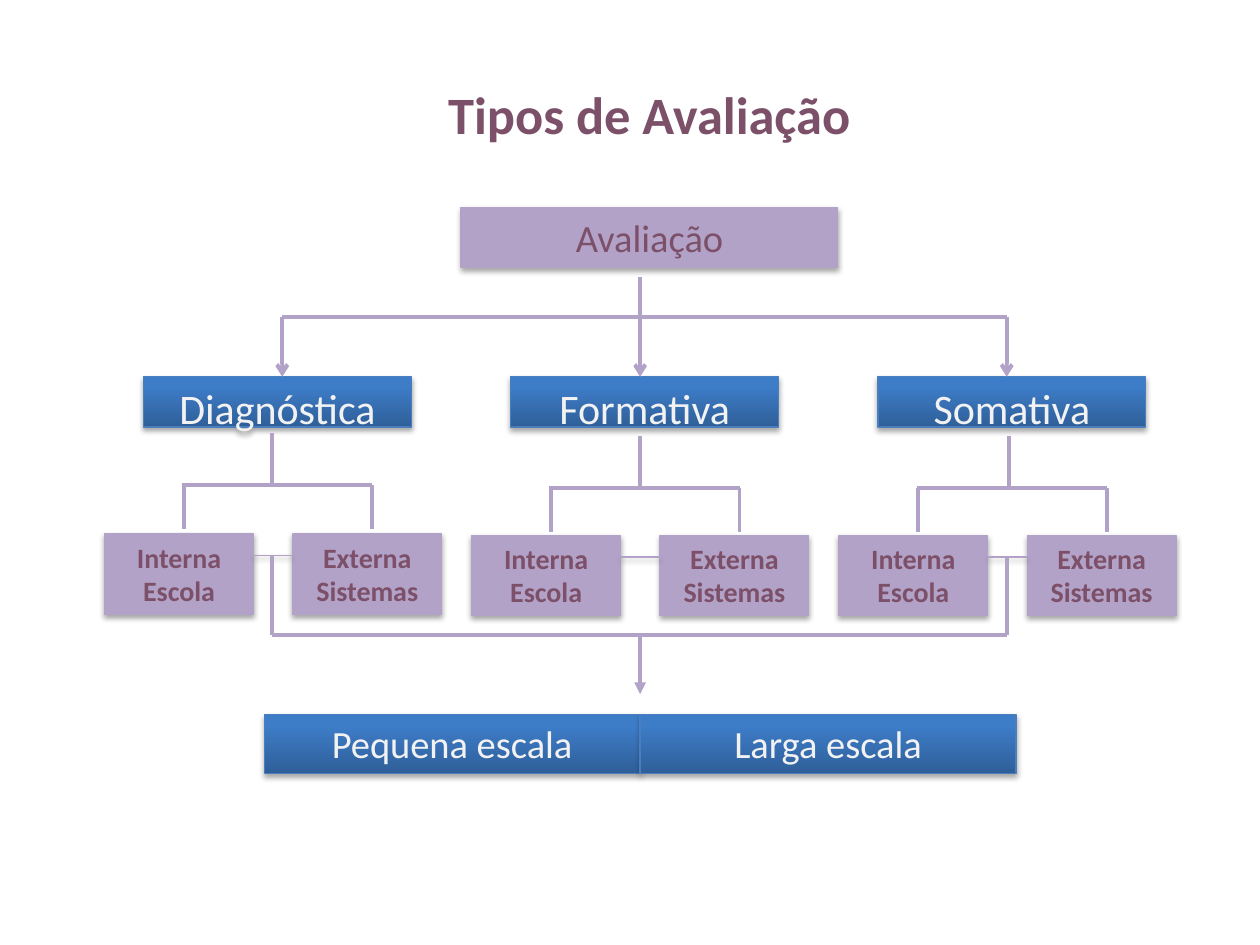
from lxml.etree import SubElement
from pptx import Presentation
from pptx.dml.color import RGBColor
from pptx.enum.shapes import MSO_CONNECTOR, MSO_SHAPE
from pptx.enum.text import MSO_ANCHOR, MSO_AUTO_SIZE, PP_ALIGN
from pptx.oxml.ns import qn
from pptx.util import Pt

TITLE = "Tipos de Avaliação"
ROOT = "Avaliação"
BRANCHES = ["Diagnóstica", "Formativa", "Somativa"]
LEAVES = [["Interna", "Escola"], ["Externa", "Sistemas"]]
SCALES = ["Pequena escala", "Larga escala"]

FONT = "Calibri"
COLORS = {
    "lilac": "B3A2C7",
    "plum": "7C5069",
    "light": "F2F2F2",
    "blue_line": "4B7EBC",
    "blue_dark": "2F5F99",
    "blue_bright": "3D7CC7",
}

# Lengths in points
PITCH = 209.8
BRANCH_LEFT, BRANCH_TOP = 82.1, 215.3
LEAF_LEFT, LEAF_GAP, LEAF_WIDTH = 59.8, 107.6, 85
STEM_X = [155.5, 365.8, 576.7]
ARROW_X = [161.3, 365.8, 575.3]
GROUP_SHIFT = [0, 1.5, 1.5]
CENTER_X = ARROW_X[1]
FORK_Y, COLLECTOR_Y = 181.4, 362.9
SCALE_WIDTH = 214.8


def color(name):
    return RGBColor.from_string(COLORS[name])


def add_shadow(shape):
    effects = shape._element.spPr.find(qn("a:effectLst"))
    if effects is None:
        effects = SubElement(shape._element.spPr, qn("a:effectLst"))
    shadow = SubElement(effects, qn("a:outerShdw"), blurRad=str(Pt(3.1)),
                        dist=str(Pt(1.8)), dir="5400000", rotWithShape="0")
    black = SubElement(shadow, qn("a:srgbClr"), val="000000")
    SubElement(black, qn("a:alpha"), val="35000")


def write(shape, lines, size, ink, bold=False):
    frame = shape.text_frame
    frame.text = "\n".join(lines)
    frame.word_wrap = True
    frame.auto_size = MSO_AUTO_SIZE.NONE
    frame.vertical_anchor = MSO_ANCHOR.TOP
    for paragraph in frame.paragraphs:
        paragraph.alignment = PP_ALIGN.CENTER
        font = paragraph.font
        font.name, font.size, font.bold = FONT, Pt(size), bold
        font.color.rgb = color(ink)


def add_box(slide, left, top, width, height, lines, size, blue=False, bold=False):
    box = slide.shapes.add_shape(MSO_SHAPE.RECTANGLE, Pt(left), Pt(top),
                                 Pt(width), Pt(height))
    if blue:
        box.fill.gradient()
        box.fill.gradient_angle = 90
        stops = zip(box.fill.gradient_stops, ["blue_dark", "blue_bright"], [0, 0.8])
        for stop, name, position in stops:
            stop.color.rgb = color(name)
            stop.position = position
    else:
        box.fill.solid()
        box.fill.fore_color.rgb = color("lilac")
    box.line.color.rgb = color("blue_line" if blue else "lilac")
    box.line.width = Pt(0.75)
    box.shadow.inherit = False
    add_shadow(box)
    write(box, lines, size, "light" if blue else "plum", bold)


def add_line(slide, x1, y1, x2, y2, width=2.25, arrow=None):
    line = slide.shapes.add_connector(MSO_CONNECTOR.STRAIGHT, Pt(x1), Pt(y1),
                                      Pt(x2), Pt(y2))
    line.line.color.rgb = color("lilac")
    line.line.width = Pt(width)
    if arrow:
        SubElement(line.line._get_or_add_ln(), qn("a:tailEnd"), type=arrow)
    SubElement(line._element.spPr, qn("a:effectLst"))
    return line


def add_leaves(slide, index):
    """Draw the pair of boxes under one branch and the bracket above it."""
    shift = GROUP_SHIFT[index]
    left = LEAF_LEFT + index * PITCH
    top = 305.1 + shift / 2
    for position, lines in enumerate(LEAVES):
        add_box(slide, left + position * LEAF_GAP, top, LEAF_WIDTH, 46.1,
                lines, 16, bold=True)
    link_y = top + 12.4
    link = add_line(slide, left + LEAF_WIDTH, link_y, left + LEAF_GAP, link_y, 0.75)
    add_shadow(link)

    bar_y = 277.4 + shift
    first = left + 45.4
    last = first + LEAF_GAP
    add_line(slide, first - 1, bar_y, last, bar_y)
    add_line(slide, STEM_X[index], 247.7 + shift, STEM_X[index], bar_y)
    for x in (first, last):
        add_line(slide, x, bar_y, x, bar_y + 25)


def main():
    presentation = Presentation()
    presentation.slide_width, presentation.slide_height = Pt(720), Pt(540)
    slide = presentation.slides.add_slide(presentation.slide_layouts[5])

    title = slide.shapes.title
    title.left, title.top, title.width, title.height = Pt(22.3), Pt(43.2), Pt(697.7), Pt(43.9)
    write(title, [TITLE], 30, "plum", bold=True)

    add_box(slide, 263.5, 118.8, 215.3, 33.8, [ROOT], 22)
    for index, label in enumerate(BRANCHES):
        add_box(slide, BRANCH_LEFT + index * PITCH, BRANCH_TOP, 153, 28.8,
                [label], 24, blue=True)
        add_leaves(slide, index)
    for index, label in enumerate(SCALES):
        add_box(slide, 151 + index * SCALE_WIDTH, 408.2, SCALE_WIDTH, 33.8,
                [label], 22, blue=True)

    add_line(slide, CENTER_X, 158.4, CENTER_X, FORK_Y)
    add_line(slide, ARROW_X[0], FORK_Y, ARROW_X[-1], FORK_Y)
    for x in ARROW_X:
        add_line(slide, x, FORK_Y, x, BRANCH_TOP, arrow="arrow")

    ends = STEM_X[0], ARROW_X[-1]
    for x in ends:
        add_line(slide, x, 317.5, x, COLLECTOR_Y)
    add_line(slide, ends[0], COLLECTOR_Y, ends[1], COLLECTOR_Y)
    add_line(slide, CENTER_X, COLLECTOR_Y, CENTER_X, 396.7, arrow="triangle")

    presentation.save("out.pptx")


if __name__ == "__main__":
    main()
